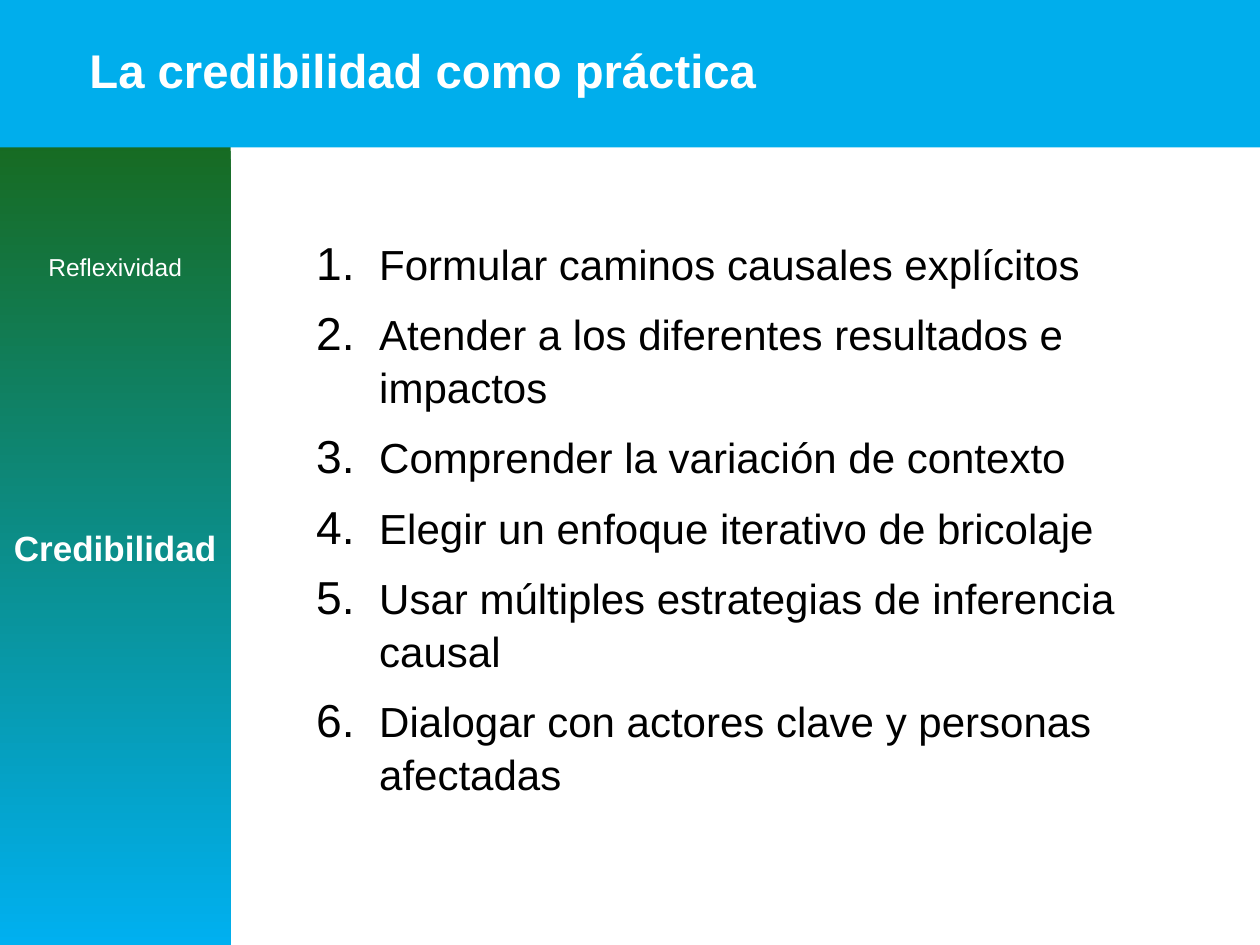
from lxml.etree import SubElement
from pptx import Presentation
from pptx.dml.color import RGBColor
from pptx.enum.shapes import MSO_SHAPE as SHAPE
from pptx.enum.text import MSO_ANCHOR as ANCHOR, MSO_AUTO_SIZE as AUTO, PP_ALIGN as ALIGN
from pptx.oxml.ns import qn
from pptx.util import Inches, Pt

COLORS = {"white": "FFFFFF", "black": "000000", "band": "00AEEC",
          "green": "176B22", "blue": "00B0F0"}
COLS, ROWS = 100, 75
SIDEBAR = 18.3

STEPS = [
    "Formular caminos causales explícitos",
    "Atender a los diferentes resultados e impactos",
    "Comprender la variación de contexto",
    "Elegir un enfoque iterativo de bricolaje",
    "Usar múltiples estrategias de inferencia causal",
    "Dialogar con actores clave y personas afectadas",
]


def rgb(name):
    return RGBColor.from_string(COLORS[name])


class Deck:
    """Holds the style and the current slide; places are grid columns and rows."""

    font = "Arial"

    def __init__(self):
        self.prs = Presentation()
        self.prs.slide_width, self.prs.slide_height = Inches(10), Inches(7.5)
        self.s = self.prs.slides.add_slide(self.prs.slide_layouts[1])

    def box(self, col, row, cols, rows):
        w, h = self.prs.slide_width, self.prs.slide_height
        return (round(col * w / COLS), round(row * h / ROWS),
                round(cols * w / COLS), round(rows * h / ROWS))

    def panel(self, place, fill, fill_end=None, kind=SHAPE.RECTANGLE):
        """Add a borderless shape, shaded downwards when fill_end is given."""
        sp = self.s.shapes.add_shape(kind, *self.box(*place))
        sp.shadow.inherit = False
        sp.line.fill.background()
        if fill_end:
            sp.fill.gradient()
            sp.fill.gradient_angle = 270
            for stop, name, at in zip(sp.fill.gradient_stops, (fill, fill_end), (0, 1)):
                stop.color.rgb = rgb(name)
                stop.position = at
        else:
            sp.fill.solid()
            sp.fill.fore_color.rgb = rgb(fill)

    def frame(self, sp, inset, anchor=ANCHOR.TOP):
        tf = sp.text_frame
        tf.word_wrap = True
        tf.auto_size = AUTO.NONE
        tf.vertical_anchor = anchor
        tf.margin_left = tf.margin_right = Inches(inset)
        tf.margin_top = tf.margin_bottom = Inches(inset)
        return tf

    def run(self, p, text, size, color, bold=False):
        r = p.add_run()
        r.text = text
        r.font.name, r.font.size, r.font.bold = self.font, Pt(size), bold
        r.font.color.rgb = rgb(color)

    def label(self, place, text, size, bold=False):
        sp = self.s.shapes.add_textbox(*self.box(*place))
        p = self.frame(sp, 0.1).paragraphs[0]
        p.alignment = ALIGN.CENTER
        self.run(p, text, size, "white", bold)

    def placeholder(self, idx, place):
        """Move a template placeholder to its place, in front of the panels."""
        sp = self.s.placeholders[idx]
        sp.left, sp.top, sp.width, sp.height = self.box(*place)
        self.s.shapes.element.append(sp.element)
        return sp

    def title(self, place, text):
        p = self.frame(self.placeholder(0, place), 0.05, ANCHOR.MIDDLE).paragraphs[0]
        p.alignment = ALIGN.LEFT
        p.line_spacing = 0.9
        self.run(p, text, 27, "white", bold=True)

    def numbered(self, place, items):
        tf = self.frame(self.placeholder(1, place), 0.1)
        for i, item in enumerate(items):
            p = tf.add_paragraph() if i else tf.paragraphs[0]
            p.line_spacing = 1.05
            p.space_before = Pt(10 if i else 0)
            pPr = p._p.get_or_add_pPr()
            pPr.set("marL", str(Inches(0.56)))
            pPr.set("indent", str(Inches(-0.5)))
            color = SubElement(pPr, qn("a:buClr"))
            SubElement(color, qn("a:srgbClr"), val=COLORS["black"])
            SubElement(pPr, qn("a:buSzPct"), val="110000")
            SubElement(pPr, qn("a:buFont"), typeface=self.font)
            SubElement(pPr, qn("a:buAutoNum"), type="arabicPeriod")
            self.run(p, item, 24, "black")


def main():
    deck = Deck()
    deck.panel((0, 11.4, SIDEBAR, 63.6), "green", "blue", SHAPE.FLOWCHART_PROCESS)
    deck.label((0, 19, SIDEBAR, 7.9), "Reflexividad", 14)
    deck.label((0, 40.8, SIDEBAR, 5.1), "Credibilidad", 20, bold=True)
    deck.panel((0, 0, COLS, 11.7), "band")
    deck.title((6.6, 1.3, 83.7, 9), "La credibilidad como práctica")
    deck.numbered((23.5, 17.7, 70, 48.4), STEPS)
    deck.prs.save("out.pptx")


if __name__ == "__main__":
    main()
